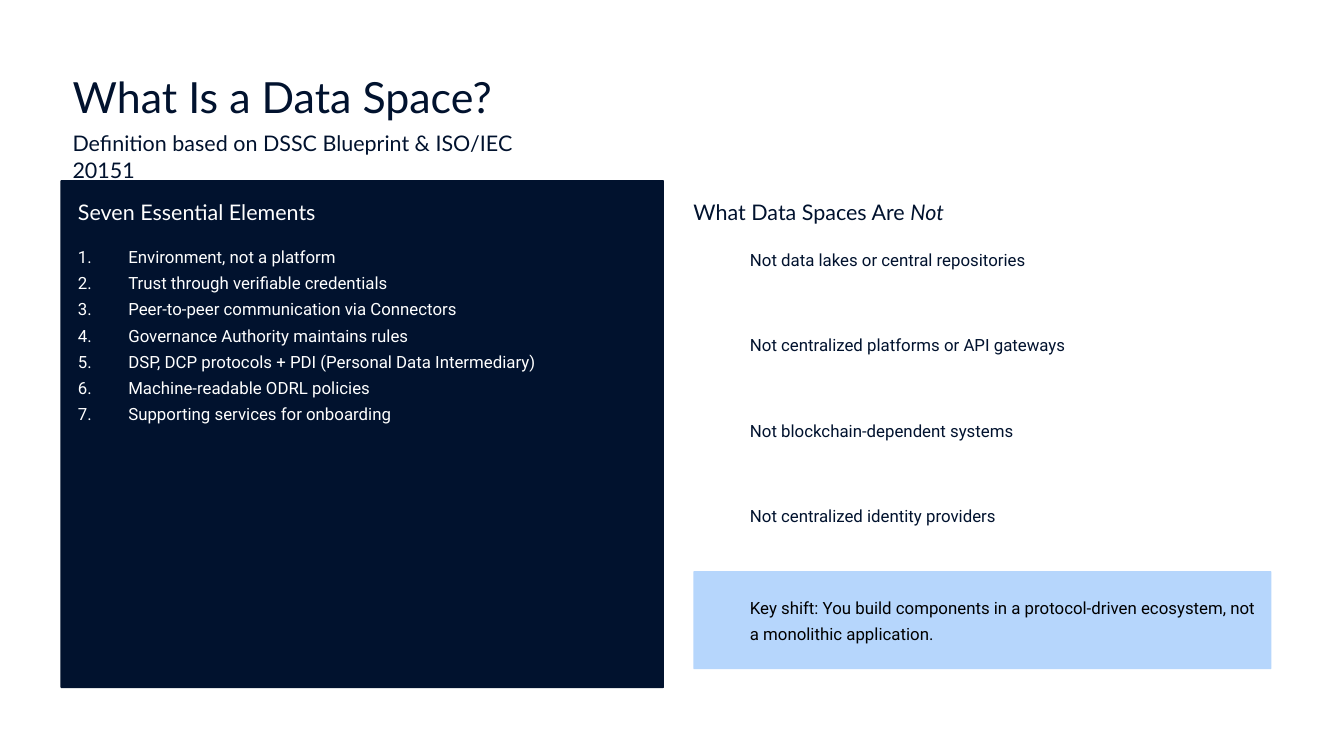
from dataclasses import dataclass

from lxml import etree
from pptx import Presentation
from pptx.dml.color import RGBColor
from pptx.enum.shapes import MSO_SHAPE
from pptx.oxml.ns import qn
from pptx.slide import Slide
from pptx.util import Inches, Pt

ROUNDED = MSO_SHAPE.ROUNDED_RECTANGLE


@dataclass(frozen=True)
class Theme:
    navy: str = "01122E"
    white: str = "FFFFFF"
    sky: str = "B6D6FC"
    black: str = "000000"
    title_size: float = 23
    heading_size: float = 11.5
    body_size: float = 9


@dataclass(frozen=True)
class Box:
    left: float
    top: float
    width: float
    height: float

    def lengths(self) -> list[Inches]:
        return [Inches(v) for v in (self.left, self.top, self.width, self.height)]


@dataclass(frozen=True)
class Style:
    font: str
    size: float
    color: str
    spacing: float


@dataclass(frozen=True)
class Span:
    text: str
    italic: bool = False


THEME = Theme()
TITLE = Style("Lato", THEME.title_size, THEME.navy, 1.04)
HEADING = Style("Lato", THEME.heading_size, THEME.navy, 1.04)
HEADING_LIGHT = Style("Lato", THEME.heading_size, THEME.white, 1.04)
BODY = Style("Roboto", THEME.body_size, THEME.navy, 1.3)
BODY_LIGHT = Style("Roboto", THEME.body_size, THEME.white, 1.3)
KEY_SHIFT = Style("Roboto", THEME.body_size, THEME.black, 1.3)

ELEMENTS = (
    "Environment, not a platform",
    "Trust through verifiable credentials",
    "Peer-to-peer communication via Connectors",
    "Governance Authority maintains rules",
    "DSP, DCP protocols + PDI (Personal Data Intermediary)",
    "Machine-readable ODRL policies",
    "Supporting services for onboarding",
)
MISCONCEPTIONS = (
    "Not data lakes or central repositories",
    "Not centralized platforms or API gateways",
    "Not blockchain-dependent systems",
    "Not centralized identity providers",
)
FIRST_MISCONCEPTION_TOP = 1.81
LAST_MISCONCEPTION_TOP = 3.72
NUMBER_INDENT = 3 / 8


def add_panel(slide: Slide, box: Box, color: str, rounding: float) -> None:
    panel = slide.shapes.add_shape(ROUNDED, *box.lengths())
    panel.adjustments[0] = rounding
    panel.shadow.inherit = False
    panel.fill.solid()
    panel.fill.fore_color.rgb = RGBColor.from_string(color)
    panel.line.fill.background()


def number_paragraph(paragraph, color: str) -> None:
    properties = paragraph._p.get_or_add_pPr()
    indent = Inches(NUMBER_INDENT)
    properties.set("marL", str(indent))
    properties.set("indent", str(-indent))
    bullet_color = etree.SubElement(properties, qn("a:buClr"))
    etree.SubElement(bullet_color, qn("a:srgbClr"), val=color)
    etree.SubElement(properties, qn("a:buAutoNum"), type="arabicPeriod")


def add_text(slide: Slide, box: Box, style: Style, *paragraphs: tuple[Span, ...],
             numbered: bool = False) -> None:
    frame = slide.shapes.add_textbox(*box.lengths()).text_frame
    frame.word_wrap = True
    frame.margin_left = frame.margin_right = Inches(0)
    frame.margin_top = frame.margin_bottom = Inches(0)
    for index, spans in enumerate(paragraphs):
        paragraph = frame.add_paragraph() if index else frame.paragraphs[0]
        if numbered:
            number_paragraph(paragraph, style.color)
        paragraph.line_spacing = style.spacing
        for span in spans:
            run = paragraph.add_run()
            run.text = span.text
            run.font.name = style.font
            run.font.size = Pt(style.size)
            run.font.color.rgb = RGBColor.from_string(style.color)
            if span.italic:
                run.font.italic = True


def add_header(slide: Slide) -> None:
    add_text(slide, Box(0.54, 0.51, 3.95, 0.4), TITLE, (Span("What Is a Data Space?"),))
    add_text(slide, Box(0.54, 0.96, 3.74, 0.2), HEADING,
             (Span("Definition based on DSSC Blueprint & ISO/IEC 20151"),))


def add_essentials(slide: Slide) -> None:
    add_panel(slide, Box(0.45, 1.34, 4.49, 3.78), THEME.navy, 0.002)
    add_text(slide, Box(0.58, 1.47, 2.38, 0.2), HEADING_LIGHT,
             (Span("Seven Essential Elements"),))
    add_text(slide, Box(0.58, 1.79, 4.23, 1.66), BODY_LIGHT,
             *((Span(element),) for element in ELEMENTS), numbered=True)


def add_misconceptions(slide: Slide) -> None:
    add_text(slide, Box(5.16, 1.47, 2.52, 0.2), HEADING,
             (Span("What Data Spaces Are "), Span("Not", italic=True)))
    pitch = (LAST_MISCONCEPTION_TOP - FIRST_MISCONCEPTION_TOP) / (len(MISCONCEPTIONS) - 1)
    for row, misconception in enumerate(MISCONCEPTIONS):
        top = FIRST_MISCONCEPTION_TOP + row * pitch
        add_text(slide, Box(5.58, top, 3.88, 0.2), BODY, (Span(misconception),))


def add_key_shift(slide: Slide) -> None:
    add_panel(slide, Box(5.16, 4.25, 4.3, 0.73), THEME.sky, 0.009)
    add_text(slide, Box(5.58, 4.4, 3.77, 0.4), KEY_SHIFT,
             (Span("Key shift: You build components in a protocol-driven ecosystem, "
                   "not a monolithic application."),))


def main() -> None:
    """Build the slide that defines a data space."""
    deck = Presentation()
    deck.slide_width = Inches(10)
    deck.slide_height = Inches(10 * 9 / 16)
    slide = deck.slides.add_slide(deck.slide_layouts[6])
    slide.background.fill.solid()
    slide.background.fill.fore_color.rgb = RGBColor.from_string(THEME.white)
    add_header(slide)
    add_essentials(slide)
    add_misconceptions(slide)
    add_key_shift(slide)
    deck.save("out.pptx")


if __name__ == "__main__":
    main()
